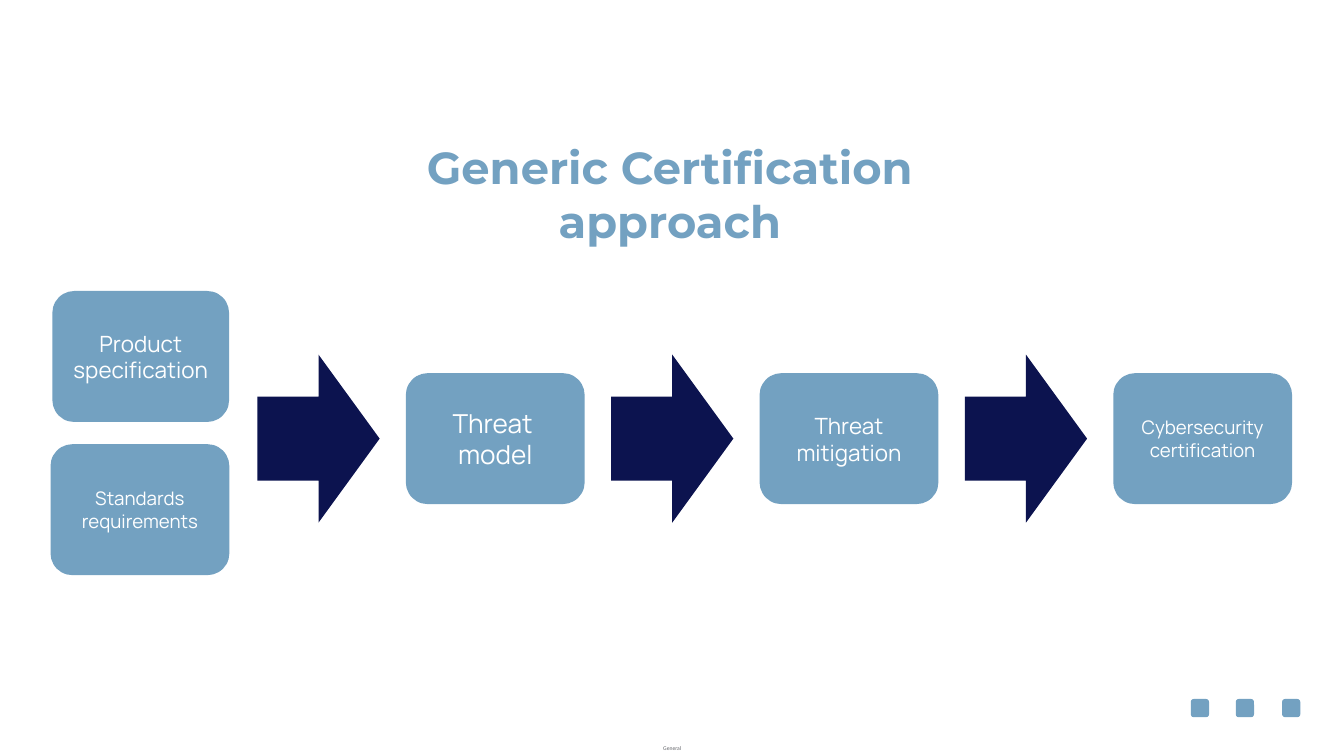
from pptx import Presentation
from pptx.dml.color import RGBColor
from pptx.enum import shapes, text
from pptx.util import Cm, Pt

COLOURS = {"blue": "73A1C1", "navy": "0C134F", "white": "FFFFFF", "grey": "626469"}


def write_text(frame, content, *, size, font, colour, bold=False,
               align=text.PP_ALIGN.CENTER):
    """Fill a text frame, one paragraph for each line of content."""
    frame.word_wrap = True
    for index, line in enumerate(content.split("\n")):
        paragraph = frame.add_paragraph() if index else frame.paragraphs[0]
        paragraph.alignment = align
        run = paragraph.add_run()
        run.text = line
        run.font.size = Pt(size)
        run.font.name = font
        run.font.bold = bold
        run.font.color.rgb = RGBColor.from_string(COLOURS[colour])


class FlowSlide:
    """The current slide and its style; all lengths are centimetres."""

    heading_font = "Montserrat"
    body_font = "Manrope"
    label_font = "Calibri"
    box_width, box_height = 6.76, 4.95
    arrow_width, arrow_height = 4.62, 6.35

    def __init__(self, presentation):
        self.slide = presentation.slides.add_slide(presentation.slide_layouts[6])

    def filled_shape(self, kind, left, top, width, height, colour):
        shape = self.slide.shapes.add_shape(
            kind, Cm(left), Cm(top), Cm(width), Cm(height))
        shape.shadow.inherit = False
        shape.fill.solid()
        shape.fill.fore_color.rgb = RGBColor.from_string(COLOURS[colour])
        shape.line.fill.background()
        return shape

    def title(self, content):
        box = self.slide.shapes.add_textbox(Cm(12.57), Cm(5.16), Cm(25.5), Cm(2.31))
        write_text(box.text_frame, content, size=48, font=self.heading_font,
                   colour="blue", bold=True)

    def classification(self, content):
        box = self.slide.shapes.add_textbox(Cm(25.07), Cm(28.14), Cm(0.74), Cm(0.25))
        frame = box.text_frame
        frame.margin_left = frame.margin_right = 0
        frame.margin_top = frame.margin_bottom = 0
        write_text(frame, content, size=6, font=self.label_font, colour="grey",
                   align=text.PP_ALIGN.LEFT)
        frame.word_wrap = False

    def box(self, content, left, top, size, width=box_width):
        shape = self.filled_shape(shapes.MSO_SHAPE.ROUNDED_RECTANGLE,
                                  left, top, width, self.box_height, "blue")
        shape.text_frame.vertical_anchor = text.MSO_ANCHOR.MIDDLE
        write_text(shape.text_frame, content, size=size, font=self.body_font,
                   colour="white")

    def arrow(self, left, top):
        self.filled_shape(shapes.MSO_SHAPE.RIGHT_ARROW, left, top,
                          self.arrow_width, self.arrow_height, "navy")

    def icon(self, left):
        self.filled_shape(shapes.MSO_SHAPE.ROUNDED_RECTANGLE,
                          left, 26.42, 0.69, 0.69, "blue")


def main():
    presentation = Presentation()
    presentation.slide_width = Cm(50.8)
    presentation.slide_height = Cm(28.575)

    flow = FlowSlide(presentation)
    flow.classification("General")
    flow.title("Generic Certification approach")

    flow.box("Product specification", 1.98, 11, 24, width=6.68)
    flow.box("Standards requirements", 1.91, 16.79, 20)

    step_pitch, flow_middle = 13.37, 16.58
    steps = [("Threat \nmodel", 28), ("Threat mitigation", 24),
             ("Cybersecurity certification", 20)]
    for index, (content, size) in enumerate(steps):
        offset = index * step_pitch
        flow.arrow(9.73 + offset, flow_middle - flow.arrow_height / 2)
        flow.box(content, 15.34 + offset, flow_middle - flow.box_height / 2, size)

    for left in (45.01, 46.71, 48.46):
        flow.icon(left)

    presentation.save("out.pptx")


if __name__ == "__main__":
    main()
